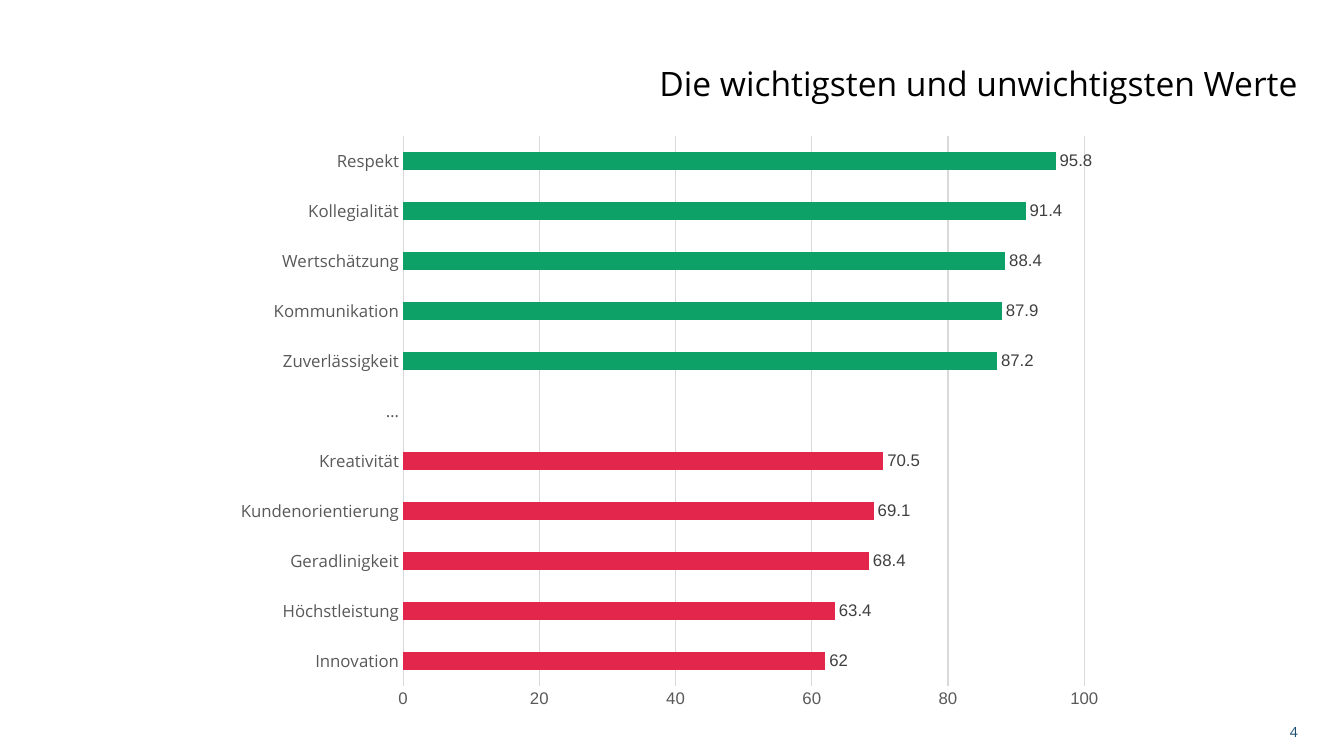
"""Build a slide with a bar chart of the most and least important values."""
import pptx
import pptx.chart.data
import pptx.dml.color
import pptx.enum.chart
import pptx.enum.text
import pptx.oxml
import pptx.oxml.ns
import pptx.util

Inches, Pt = pptx.util.Inches, pptx.util.Pt

TITLE = "Die wichtigsten und unwichtigsten Werte"
PAGE = "4"
LEAST_IMPORTANT = [
    ("Innovation", 62),
    ("Höchstleistung", 63.4),
    ("Geradlinigkeit", 68.4),
    ("Kundenorientierung", 69.1),
    ("Kreativität", 70.5),
]
MOST_IMPORTANT = [
    ("Zuverlässigkeit", 87.2),
    ("Kommunikation", 87.9),
    ("Wertschätzung", 88.4),
    ("Kollegialität", 91.4),
    ("Respekt", 95.8),
]
RATINGS = LEAST_IMPORTANT + [("…", None)] + MOST_IMPORTANT
RED, GREEN, NAVY = "E2264C", "0EA167", "223B7A"
GRID, AXIS_TEXT, LABEL_TEXT = "D9D9D9", "595959", "404040"
PLOT_AREA = {"x": 0.2, "y": 0.02, "w": 0.76, "h": 0.92}


def rgb(code):
    return pptx.dml.color.RGBColor.from_string(code)


def style_font(font, size, color, name):
    font.size = Pt(size)
    font.name = name
    font.color.rgb = rgb(color)


def add_right_text(slide, text, box, size, color):
    frame = slide.shapes.add_textbox(*map(Inches, box)).text_frame
    frame.word_wrap = True
    frame.vertical_anchor = pptx.enum.text.MSO_ANCHOR.MIDDLE
    line = frame.paragraphs[0]
    line.text = text
    line.alignment = pptx.enum.text.PP_ALIGN.RIGHT
    style_font(line.font, size, color, "Open Sans")


def style_line(line, color):
    line.color.rgb = rgb(color)
    line.width = Pt(0.75)


def place_plot_area(chart):
    plot_area = chart.plots[0]._element.getparent()
    for layout in plot_area.findall(pptx.oxml.ns.qn("c:layout")):
        plot_area.remove(layout)
    modes = "".join(f'<c:{side}Mode val="edge"/>' for side in "xy")
    sizes = "".join(f'<c:{side} val="{share}"/>' for side, share in PLOT_AREA.items())
    plot_area.insert(0, pptx.oxml.parse_xml(
        f'<c:layout {pptx.oxml.ns.nsdecls("c")}><c:manualLayout>'
        f'<c:layoutTarget val="inner"/>{modes}{sizes}</c:manualLayout></c:layout>'))


def add_ratings_chart(slide):
    data = pptx.chart.data.CategoryChartData()
    data.categories = [value for value, _ in RATINGS]
    data.add_series("Series 1", [rating for _, rating in RATINGS])
    chart = slide.shapes.add_chart(
        pptx.enum.chart.XL_CHART_TYPE.BAR_CLUSTERED,
        *map(Inches, (2.22, 1.23, 8.89, 5.93)), data).chart
    chart.has_legend = False
    chart.has_title = False
    style_font(chart.font, 10, "000000", "Arial")
    place_plot_area(chart)

    for axis, font_name in ((chart.category_axis, "Open Sans"), (chart.value_axis, "Arial")):
        axis.major_tick_mark = axis.minor_tick_mark = pptx.enum.chart.XL_TICK_MARK.NONE
        style_font(axis.tick_labels.font, 12, AXIS_TEXT, font_name)
    style_line(chart.category_axis.format.line, GRID)
    scale = chart.value_axis
    scale.minimum_scale, scale.maximum_scale, scale.major_unit = 0, 100, 20
    scale.format.line.fill.background()
    scale.has_major_gridlines = True
    style_line(scale.major_gridlines.format.line, GRID)

    bars = chart.plots[0]
    bars.gap_width = 182
    bars.vary_by_categories = False
    ratings = bars.series[0]
    ratings.format.fill.solid()
    ratings.format.fill.fore_color.rgb = rgb(NAVY)
    for index, (_, rating) in enumerate(RATINGS):
        if rating is not None:
            fill = ratings.points[index].format.fill
            fill.solid()
            fill.fore_color.rgb = rgb(RED if index < len(LEAST_IMPORTANT) else GREEN)
    labels = ratings.data_labels
    labels.show_value = True
    labels.position = pptx.enum.chart.XL_LABEL_POSITION.OUTSIDE_END
    style_font(labels.font, 12, LABEL_TEXT, "Arial")


def main():
    deck = pptx.Presentation()
    deck.slide_width, deck.slide_height = Inches(13.33), Inches(7.5)
    slide = deck.slides.add_slide(deck.slide_layouts[6])
    add_right_text(slide, PAGE, (9.97, 7.02, 3, 0.48), 10, "194D6F")
    add_right_text(slide, TITLE, (2.89, 0.58, 10.08, 0.48), 24, "000000")
    add_ratings_chart(slide)
    deck.save("out.pptx")


if __name__ == "__main__":
    main()
